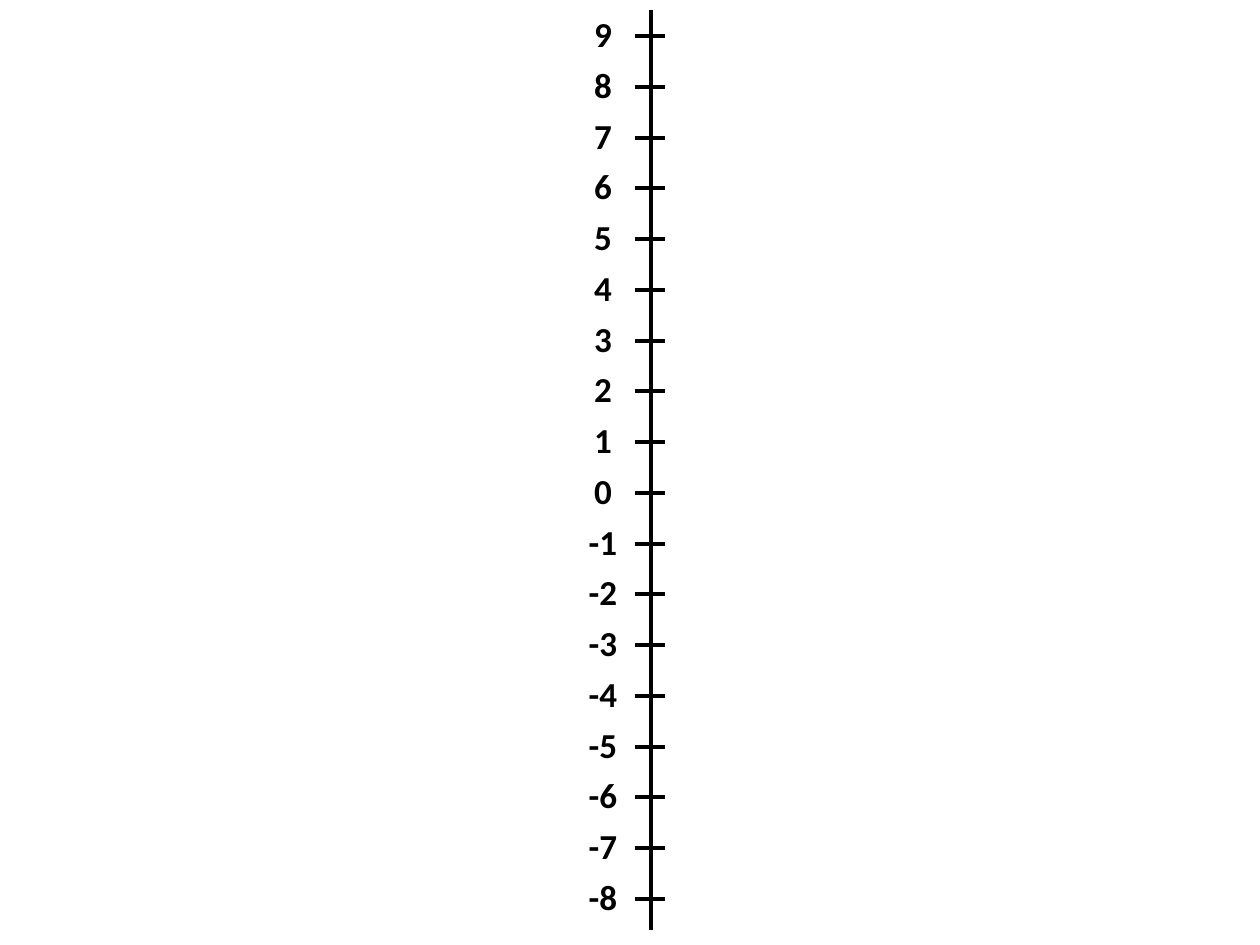
from dataclasses import dataclass

from lxml.etree import SubElement
from pptx import Presentation
from pptx.dml.color import RGBColor
from pptx.enum.shapes import MSO_CONNECTOR as Connector
from pptx.enum.text import MSO_ANCHOR as Anchor, MSO_AUTO_SIZE as AutoSize, PP_ALIGN as Align
from pptx.oxml.ns import qn
from pptx.slide import Slide
from pptx.util import Emu, Pt

PX_PER_INCH = 126
EMU_PER_PX = 914400 / PX_PER_INCH

BLACK = "000000"
TOP_VALUE, BOTTOM_VALUE = 9, -8
TOP_TICK, BOTTOM_TICK = 36, 899
AXIS_X, AXIS_TOP, AXIS_BOTTOM = 651, 10, 930
TICK_LEFT, TICK_RIGHT = 635, 665
LABEL_CENTER, LABEL_HEIGHT, LABEL_RISE = 603, 55, 30
LABEL_WIDTH, NEGATIVE_WIDTH = 43, 54


@dataclass(frozen=True)
class Mark:
    """One value on the number line, at height y."""
    value: int
    y: int


def px(length: float) -> Emu:
    return Emu(round(length * EMU_PER_PX))


def color(hex_code: str) -> RGBColor:
    return RGBColor.from_string(hex_code)


def draw_line(slide: Slide, x1: int, y1: int, x2: int, y2: int) -> None:
    line = slide.shapes.add_connector(Connector.STRAIGHT, px(x1), px(y1), px(x2), px(y2))
    line.line.color.rgb = color(BLACK)
    line.line.width = Pt(2.25)
    SubElement(line._element.spPr, qn("a:effectLst"))


def draw_text(slide: Slide, text: str, left: float, top: int, width: int, height: int, *,
              size: int = 20, font: str = "Calibri", bold: bool = True,
              hex_code: str = BLACK, align: Align = Align.CENTER) -> None:
    box = slide.shapes.add_textbox(px(left), px(top), px(width), px(height))
    frame = box.text_frame
    frame.word_wrap = False
    frame.auto_size = AutoSize.SHAPE_TO_FIT_TEXT
    frame.vertical_anchor = Anchor.TOP
    paragraph = frame.paragraphs[0]
    paragraph.alignment = align
    run = paragraph.add_run()
    run.text = text
    run.font.name = font
    run.font.size = Pt(size)
    run.font.bold = bold
    run.font.color.rgb = color(hex_code)


def draw_mark(slide: Slide, mark: Mark) -> None:
    draw_line(slide, TICK_RIGHT, mark.y, TICK_LEFT, mark.y)
    width = NEGATIVE_WIDTH if mark.value < 0 else LABEL_WIDTH
    draw_text(slide, str(mark.value), LABEL_CENTER - width / 2, mark.y - LABEL_RISE,
              width, LABEL_HEIGHT)


def main() -> None:
    deck = Presentation()
    deck.slide_width, deck.slide_height = px(1260), px(945)
    slide = deck.slides.add_slide(deck.slide_layouts[6])

    # Vertical axis
    draw_line(slide, AXIS_X, AXIS_TOP, AXIS_X, AXIS_BOTTOM)

    # Evenly spaced ticks with their numbers
    pitch = (BOTTOM_TICK - TOP_TICK) / (TOP_VALUE - BOTTOM_VALUE)
    for value in range(TOP_VALUE, BOTTOM_VALUE - 1, -1):
        draw_mark(slide, Mark(value, round(TOP_TICK + (TOP_VALUE - value) * pitch)))

    deck.save("out.pptx")


if __name__ == "__main__":
    main()
